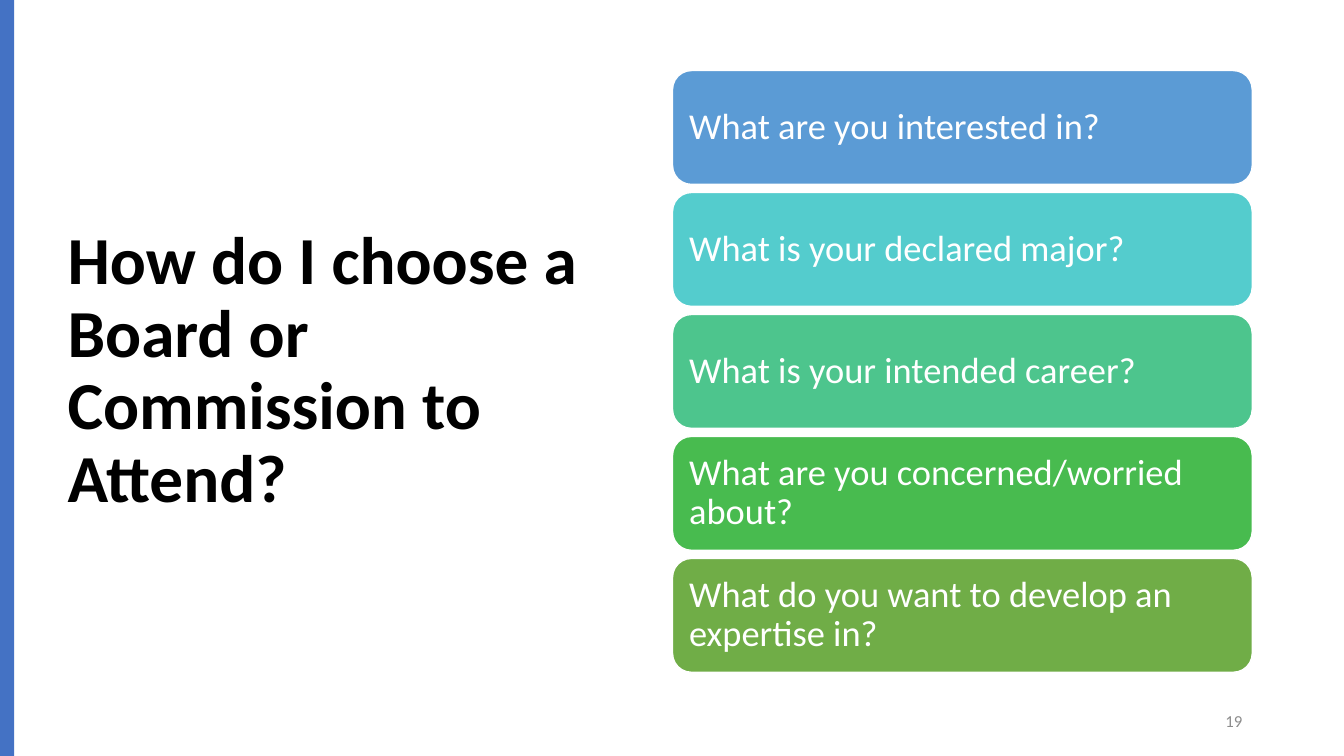
from pptx import Presentation
from pptx.dml.color import RGBColor
from pptx.enum.shapes import MSO_SHAPE as SHAPE
from pptx.enum.text import MSO_ANCHOR as ANCHOR, PP_ALIGN as ALIGN
from pptx.util import Inches, Pt

BLACK = RGBColor(0x00, 0x00, 0x00)
WHITE = RGBColor(0xFF, 0xFF, 0xFF)
GRAY = RGBColor(0x8C, 0x8C, 0x8C)
BLUE = RGBColor(0x44, 0x72, 0xC4)
SKY = RGBColor(0x5B, 0x9B, 0xD5)
TURQUOISE = RGBColor(0x54, 0xCC, 0xCD)
MINT = RGBColor(0x4D, 0xC5, 0x8D)
GREEN = RGBColor(0x48, 0xBB, 0x4F)
OLIVE = RGBColor(0x70, 0xAD, 0x47)

QUESTIONS = [
    ("What are you interested in?", SKY),
    ("What is your declared major?", TURQUOISE),
    ("What is your intended career?", MINT),
    ("What are you concerned/worried about?", GREEN),
    ("What do you want to develop an expertise in?", OLIVE),
]


class SlideBuilder:
    font = "Calibri"

    def __init__(self, prs):
        self.s = prs.slides.add_slide(prs.slide_layouts[5])

    def set_text(self, sp, text, size, color, bold=False, align=ALIGN.LEFT, spacing=0.9):
        tf = sp.text_frame
        tf.text = text
        tf.word_wrap = True
        tf.vertical_anchor = ANCHOR.MIDDLE
        p = tf.paragraphs[0]
        p.alignment, p.line_spacing = align, spacing
        f = p.runs[0].font
        f.name, f.size, f.bold = self.font, Pt(size), bold
        f.color.rgb = color

    def title(self, text, x, y, w, h):
        sp = self.s.shapes.title
        sp.left, sp.top, sp.width, sp.height = map(Inches, (x, y, w, h))
        self.set_text(sp, text, 48, BLACK, bold=True)

    def text(self, text, x, y, w, h, size, color, align):
        sp = self.s.shapes.add_textbox(*map(Inches, (x, y, w, h)))
        self.set_text(sp, text, size, color, align=align, spacing=1.0)

    def shape(self, kind, x, y, w, h, fill):
        sp = self.s.shapes.add_shape(kind, *map(Inches, (x, y, w, h)))
        sp.shadow.inherit = False
        sp.fill.solid()
        sp.fill.fore_color.rgb = fill
        sp.line.fill.background()
        return sp

    def card(self, text, x, y, w, h, fill):
        sp = self.shape(SHAPE.ROUNDED_RECTANGLE, x, y, w, h, fill)
        sp.line.color.rgb = WHITE
        sp.line.width = Pt(1)
        tf = sp.text_frame
        tf.margin_left = tf.margin_right = tf.margin_top = tf.margin_bottom = Inches(0.11)
        self.set_text(sp, text, 26, WHITE)


def main():
    prs = Presentation()
    prs.slide_width, prs.slide_height = Inches(13.33), Inches(7.5)
    slide = SlideBuilder(prs)

    # Title and side bar
    slide.title("How do I choose a Board or Commission to Attend?", 0.57, 0.68, 5.67, 6.02)
    slide.shape(SHAPE.RECTANGLE, 0, 0, 0.14, 7.5, BLUE)

    # Slide number
    slide.text("19", 9.42, 6.95, 3, 0.4, 12, GRAY, ALIGN.RIGHT)

    # Question cards
    top, pitch = 0.7, 1.21
    for i, (question, color) in enumerate(QUESTIONS):
        slide.card(question, 6.67, top + i * pitch, 5.75, 1.13, color)

    prs.save("out.pptx")


if __name__ == "__main__":
    main()
